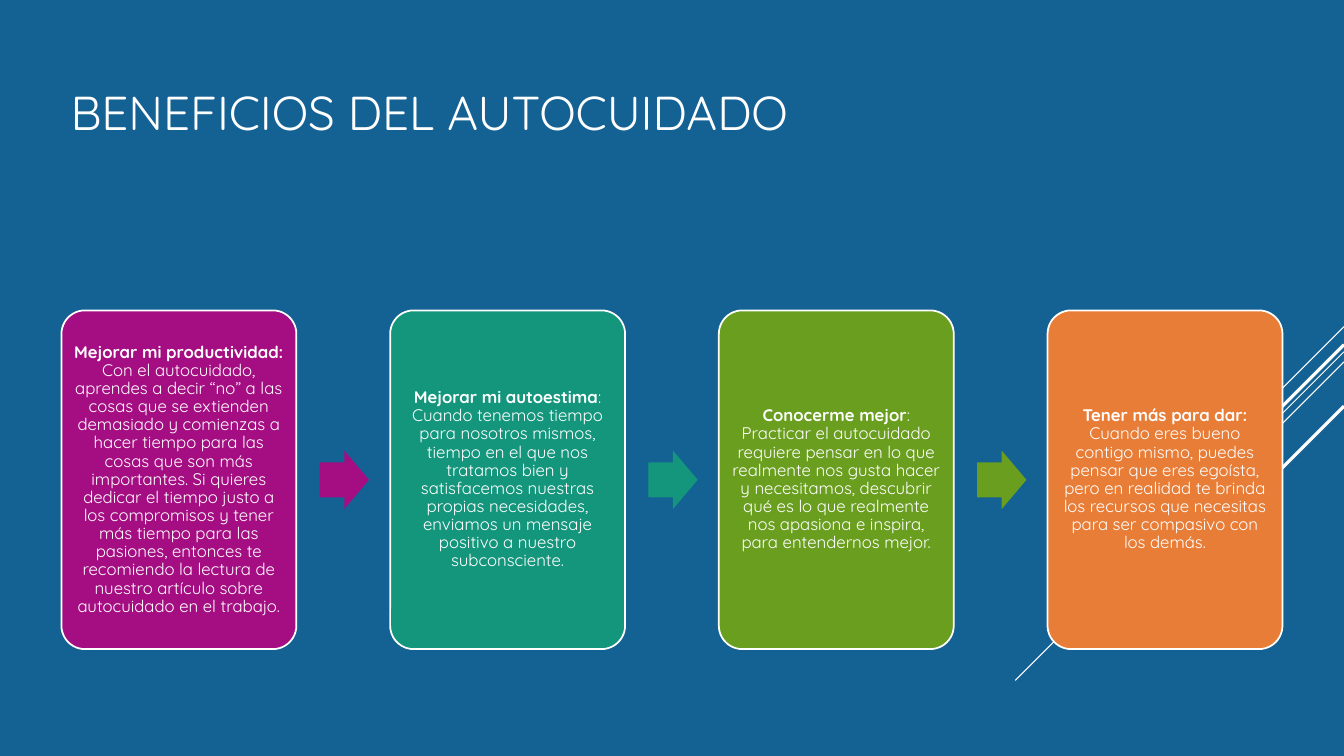
import pptx
import pptx.chart.data
import pptx.dml.color
import pptx.enum.shapes
import pptx.enum.text
import pptx.oxml
import pptx.oxml.ns
import pptx.util

Inches = pptx.util.Inches
Shapes = pptx.enum.shapes.MSO_SHAPE
Align = pptx.enum.text.PP_ALIGN

COLORS = {
    "background": "146194",
    "white": "FFFFFF",
    "productivity": "A50E82",
    "esteem": "14967C",
    "knowledge": "6A9E1F",
    "giving": "E87D37",
}

# Heading, body and color of each benefit
BENEFITS = [
    ("Mejorar mi productividad: ",
     "Con el autocuidado, aprendes a decir “no” a las cosas que se extienden "
     "demasiado y comienzas a hacer tiempo para las cosas que son más "
     "importantes. Si quieres dedicar el tiempo justo a los compromisos y tener "
     "más tiempo para las pasiones, entonces te recomiendo la lectura de "
     "nuestro artículo sobre autocuidado en el trabajo.", "productivity"),
    ("Mejorar mi autoestima",
     ": Cuando tenemos tiempo para nosotros mismos, tiempo en el que nos "
     "tratamos bien y satisfacemos nuestras propias necesidades, enviamos un "
     "mensaje positivo a nuestro subconsciente.", "esteem"),
    ("Conocerme mejor",
     ": Practicar el autocuidado requiere pensar en lo que realmente nos gusta "
     "hacer y necesitamos, descubrir qué es lo que realmente nos apasiona e "
     "inspira, para entendernos mejor.", "knowledge"),
    ("Tener más para dar: ",
     "Cuando eres bueno contigo mismo, puedes pensar que eres egoísta, pero en "
     "realidad te brinda los recursos que necesitas para ser compasivo con los "
     "demás.", "giving"),
]

# Diagonal lines falling from the right edge: start height, run, width
DIAGONALS = [(3.24, 1, 0.75), (3.49, 3.26, 0.75), (3.59, 2.07, 0.75),
             (3.42, 1.91, 2.25), (4.03, 1.39, 2.25)]

SLIDE_WIDTH = 13.33
CARD_LEFT, CARD_TOP, CARD_WIDTH, CARD_HEIGHT = 0.61, 3.08, 2.33, 3.36
CARD_PITCH = 3.26
ARROW_OFFSET, ARROW_WIDTH, ARROW_HEIGHT = 2.56, 0.49, 0.58


def color(name):
    return pptx.dml.color.RGBColor.from_string(COLORS[name])


def add_text(para, text, size=12, bold=False, font="Quicksand", tint="white"):
    span = para.add_run()
    span.text = text
    span.font.name = font
    span.font.size = pptx.util.Pt(size)
    span.font.bold = bold
    span.font.color.rgb = color(tint)


class SlideBuilder:
    def __init__(self, deck):
        self.page = deck.slides.add_slide(deck.slide_layouts[5])
        self.page.background.fill.solid()
        self.page.background.fill.fore_color.rgb = color("background")

    def frame(self, box, align, inset_x, inset_y):
        frame = box.text_frame
        frame.word_wrap = True
        frame.auto_size = pptx.enum.text.MSO_AUTO_SIZE.NONE
        frame.vertical_anchor = pptx.enum.text.MSO_ANCHOR.MIDDLE
        frame.margin_left = frame.margin_right = Inches(inset_x)
        frame.margin_top = frame.margin_bottom = Inches(inset_y)
        para = frame.paragraphs[0]
        para.alignment = align
        para.line_spacing = 0.9
        return para

    def title(self, text, left, top, width, height):
        box = self.page.shapes.title
        box.left, box.top = Inches(left), Inches(top)
        box.width, box.height = Inches(width), Inches(height)
        add_text(self.frame(box, Align.LEFT, 0.1, 0.05), text, size=34)

    def line(self, start, end, width):
        line = self.page.shapes.add_connector(
            pptx.enum.shapes.MSO_CONNECTOR.STRAIGHT,
            *(Inches(value) for value in start + end))
        line.line.color.rgb = color("white")
        line.line.width = pptx.util.Pt(width)
        effects = pptx.oxml.parse_xml(
            "<a:effectLst %s/>" % pptx.oxml.ns.nsdecls("a"))
        line._element.spPr.append(effects)

    def shape(self, kind, left, top, width, height, fill, adjustments):
        shape = self.page.shapes.add_shape(
            kind, Inches(left), Inches(top), Inches(width), Inches(height))
        shape.shadow.inherit = False
        shape.fill.solid()
        shape.fill.fore_color.rgb = color(fill)
        shape.line.fill.background()
        for index, value in enumerate(adjustments):
            shape.adjustments[index] = value
        return shape

    def card(self, left, heading, body, fill):
        box = self.shape(Shapes.ROUNDED_RECTANGLE, left, CARD_TOP,
                         CARD_WIDTH, CARD_HEIGHT, fill, [0.1])
        box.line.color.rgb = color("white")
        box.line.width = pptx.util.Pt(1.25)
        para = self.frame(box, Align.CENTER, 0.05, 0.05)
        add_text(para, heading, bold=True)
        add_text(para, body)

    def arrow(self, left, fill):
        top = CARD_TOP + (CARD_HEIGHT - ARROW_HEIGHT) / 2
        self.shape(Shapes.RIGHT_ARROW, left, top, ARROW_WIDTH, ARROW_HEIGHT,
                   fill, [0.6, 0.5])


def main():
    deck = pptx.Presentation()
    deck.slide_width, deck.slide_height = Inches(SLIDE_WIDTH), Inches(7.5)
    builder = SlideBuilder(deck)

    # Decorative diagonals, behind the cards
    for top, run, width in DIAGONALS:
        builder.line((SLIDE_WIDTH, top), (SLIDE_WIDTH - run, top + run), width)

    builder.title("BENEFICIOS DEL AUTOCUIDADO", 0.6, 0.6, 7.99, 1.08)

    # Row of cards, with an arrow between neighbours
    for index, (heading, body, fill) in enumerate(BENEFITS):
        left = CARD_LEFT + index * CARD_PITCH
        builder.card(left, heading, body, fill)
        if index < len(BENEFITS) - 1:
            builder.arrow(left + ARROW_OFFSET, fill)

    deck.save("out.pptx")


if __name__ == "__main__":
    main()
